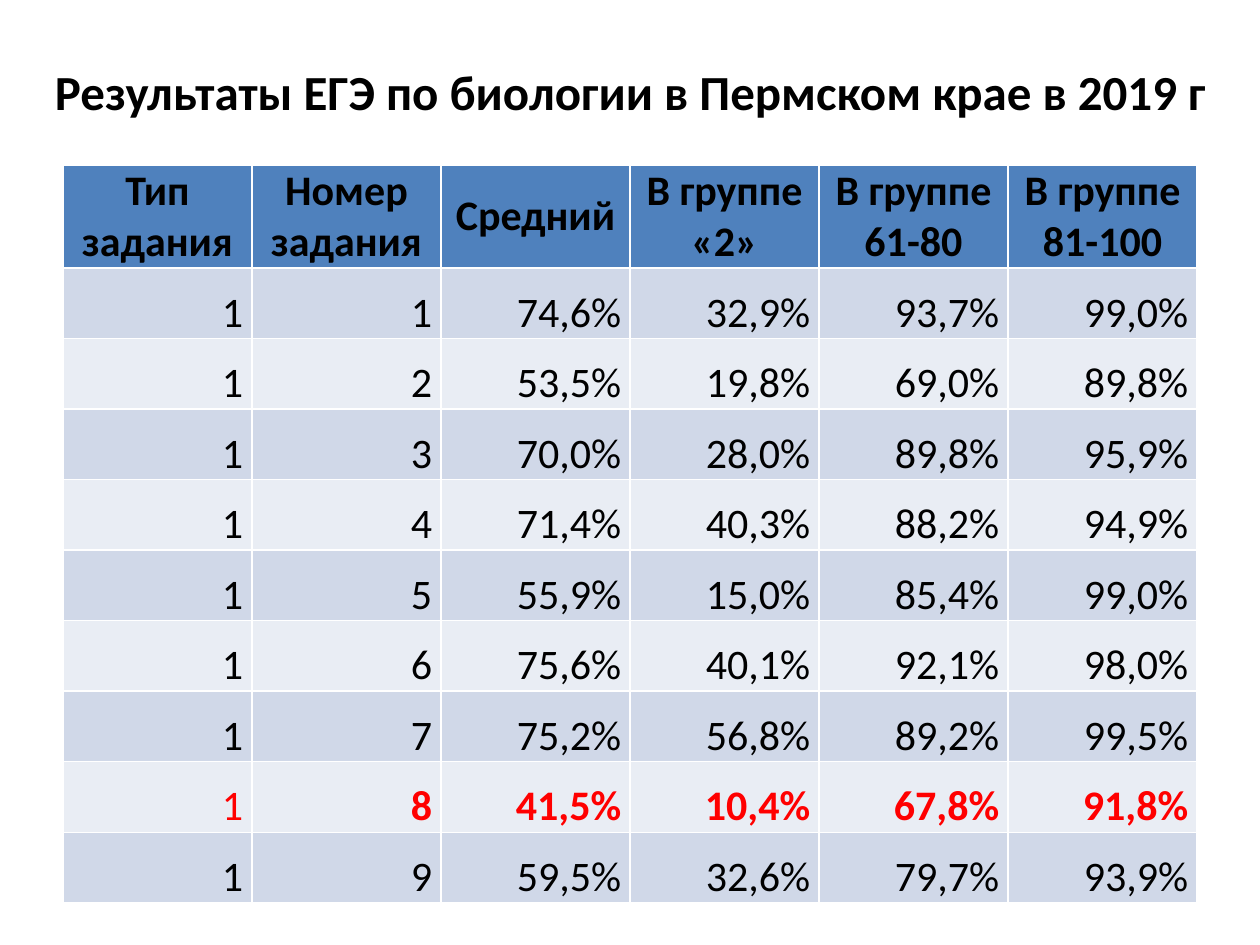
import dataclasses

import pptx
import pptx.dml.color
import pptx.enum.text
import pptx.util

ALIGN = pptx.enum.text.PP_ALIGN
ANCHOR = pptx.enum.text.MSO_ANCHOR


@dataclasses.dataclass(frozen=True)
class Theme:
    font: str = "Calibri"
    text: str = "000000"
    accent: str = "FF0000"
    header: str = "4F81BD"
    bands: tuple = ("D0D8E8", "E9EDF4")
    title_size: int = 28
    table_size: int = 24


THEME = Theme()
WIDTH, HEIGHT = pptx.util.Inches(10), pptx.util.Inches(7.5)
TITLE_BOX = (0.02, 0.04, 0.96, 0.113)
TABLE_BOX = (0.05, 0.175, 0.9, 0.747)

TITLE = "Результаты ЕГЭ по биологии в Пермском крае в 2019 г"
HEADERS = ["Тип задания", "Номер задания", "Средний",
           "В группе «2»", "В группе 61-80", "В группе 81-100"]
TASK_TYPE = "1"
WEAKEST_TASK = 8
SCORES = [
    ("74,6%", "32,9%", "93,7%", "99,0%"),
    ("53,5%", "19,8%", "69,0%", "89,8%"),
    ("70,0%", "28,0%", "89,8%", "95,9%"),
    ("71,4%", "40,3%", "88,2%", "94,9%"),
    ("55,9%", "15,0%", "85,4%", "99,0%"),
    ("75,6%", "40,1%", "92,1%", "98,0%"),
    ("75,2%", "56,8%", "89,2%", "99,5%"),
    ("41,5%", "10,4%", "67,8%", "91,8%"),
    ("59,5%", "32,6%", "79,7%", "93,9%"),
]


def place(box):
    x, y, w, h = box
    return int(x * WIDTH), int(y * HEIGHT), int(w * WIDTH), int(h * HEIGHT)


def apply(obj, formats):
    for name, value in formats.items():
        setattr(obj, name, value)


def rgb(value):
    return pptx.dml.color.RGBColor.from_string(value)


def write(tf, text, size, align, bold=False, color=THEME.text):
    p = tf.paragraphs[0]
    p.alignment = align
    r = p.add_run()
    r.text = text
    apply(r.font, {"name": THEME.font, "size": pptx.util.Pt(size), "bold": bold})
    r.font.color.rgb = rgb(color)


def add_title(slide, box):
    sp = slide.shapes.title
    apply(sp, dict(zip(("left", "top", "width", "height"), place(box))))
    apply(sp.text_frame, {"word_wrap": True, "vertical_anchor": ANCHOR.MIDDLE})
    write(sp.text_frame, TITLE, THEME.title_size, ALIGN.CENTER, bold=True)


def fill_cell(cell, text, fill, anchor, **formats):
    side = pptx.util.Inches(0.07)
    apply(cell, {"margin_left": side, "margin_right": side, "margin_top": 0,
                 "margin_bottom": 0, "vertical_anchor": anchor})
    cell.fill.solid()
    cell.fill.fore_color.rgb = rgb(fill)
    write(cell.text_frame, text, THEME.table_size, **formats)


def add_results(slide, box):
    table = slide.shapes.add_table(len(SCORES) + 1, len(HEADERS), *place(box)).table
    for row in table.rows:
        row.height = pptx.util.Inches(0.56)
    for col, text in enumerate(HEADERS):
        fill_cell(table.cell(0, col), text, THEME.header, ANCHOR.MIDDLE,
                  align=ALIGN.CENTER, bold=True)
    for task, scores in enumerate(SCORES, start=1):
        weakest = task == WEAKEST_TASK
        for col, text in enumerate((TASK_TYPE, str(task), *scores)):
            fill_cell(table.cell(task, col), text, THEME.bands[(task - 1) % 2],
                      ANCHOR.BOTTOM, align=ALIGN.RIGHT, bold=weakest and col > 0,
                      color=THEME.accent if weakest else THEME.text)


def main():
    prs = pptx.Presentation()
    apply(prs, {"slide_width": WIDTH, "slide_height": HEIGHT})
    slide = prs.slides.add_slide(prs.slide_layouts.get_by_name("Title Only"))
    add_title(slide, TITLE_BOX)
    add_results(slide, TABLE_BOX)
    prs.save("out.pptx")


if __name__ == "__main__":
    main()
